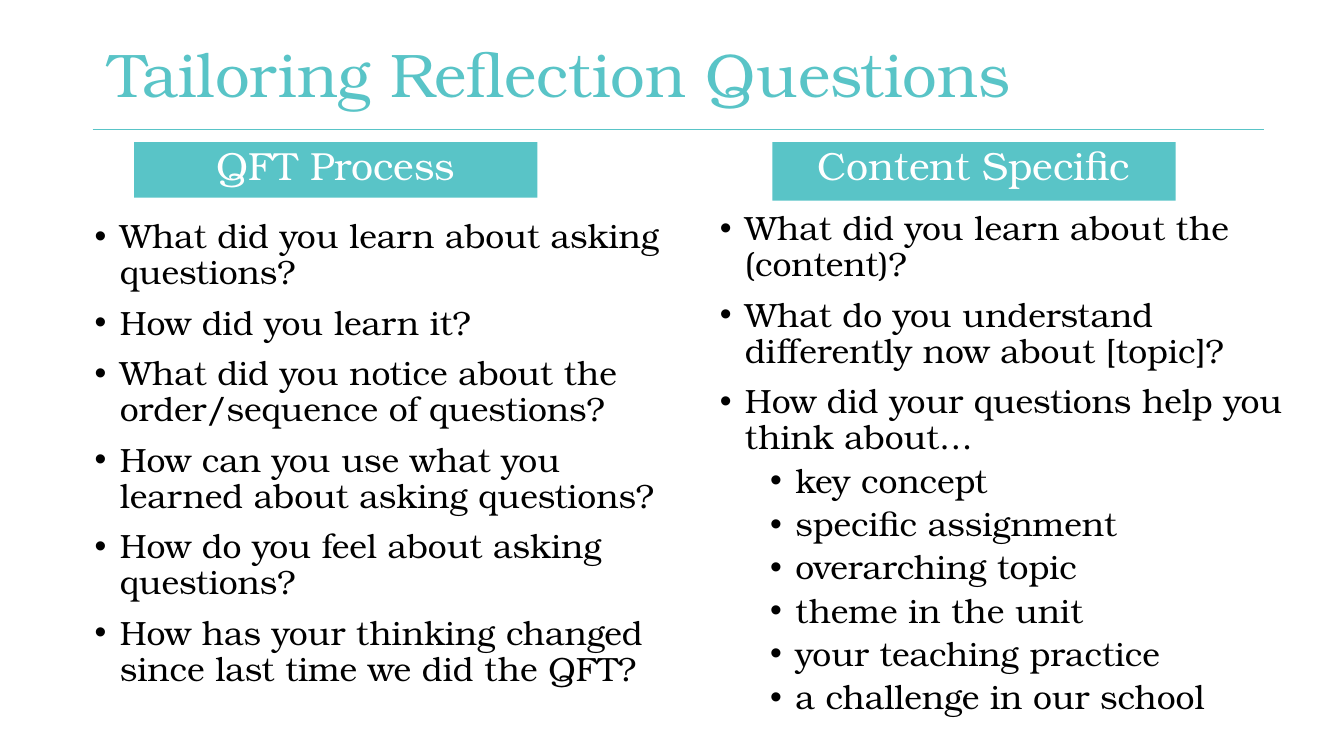
import pptx
import pptx.dml.color
import pptx.enum.shapes
import pptx.enum.text
import pptx.oxml
import pptx.oxml.ns
import pptx.util

PX = 9144
FONT = "TeX Gyre Bonum"
COLORS = {"teal": "59C4C7", "black": "000000", "white": "FFFFFF"}
ANCHOR = pptx.enum.text.MSO_ANCHOR
INDENT = 25 * PX


def color(name):
    return pptx.dml.color.RGBColor.from_string(COLORS[name])


def style(para, size, color_name, space_before=0):
    para.line_spacing = 0.9
    para.space_before = pptx.util.Pt(space_before)
    for span in para.runs:
        span.font.name = FONT
        span.font.size = pptx.util.Pt(size)
        span.font.color.rgb = color(color_name)


deck = pptx.Presentation()
deck.slide_width = 1333 * PX
deck.slide_height = 750 * PX
page = deck.slides.add_slide(deck.slide_layouts[6])

rule = page.shapes.add_connector(
    pptx.enum.shapes.MSO_CONNECTOR.STRAIGHT, 92 * PX, 128 * PX, 1254 * PX, 128 * PX
)
rule.line.color.rgb = color("teal")
rule.line.width = pptx.util.Pt(0.5)
pptx.oxml.ns.qn("a:effectLst")
rule._element.spPr.append(
    rule._element.makeelement(pptx.oxml.ns.qn("a:effectLst"), {})
)

title = page.shapes.add_textbox(98 * PX, 4 * PX, 1150 * PX, 145 * PX)
title.text_frame.word_wrap = True
title.text_frame.vertical_anchor = ANCHOR.MIDDLE
title.text_frame.text = "Tailoring Reflection Questions"
style(title.text_frame.paragraphs[0], 44, "teal")

columns = [
    ((84, 213, 585, 537), [
        (0, "What did you learn about asking questions?"),
        (0, "How did you learn it?"),
        (0, "What did you notice about the order/sequence of questions?"),
        (0, "How can you use what you learned about asking questions?"),
        (0, "How do you feel about asking questions?"),
        (0, "How has your thinking changed since last time we did the QFT?"),
    ]),
    ((704, 205, 611, 524), [
        (0, "What did you learn about the (content)?"),
        (0, "What do you understand differently now about [topic]?"),
        (0, "How did your questions help you think about…"),
        (1, "key concept"),
        (1, "specific assignment"),
        (1, "overarching topic"),
        (1, "theme in the unit"),
        (1, "your teaching practice"),
        (1, "a challenge in our school"),
    ]),
]
for bounds, questions in columns:
    box = page.shapes.add_textbox(*[length * PX for length in bounds])
    frame = box.text_frame
    frame.word_wrap = True
    frame.text = "\n".join(text for level, text in questions)
    for para, (level, text) in zip(frame.paragraphs, questions):
        para.level = level
        style(para, 24, "black", 5 if level else 10)
        properties = para._p.get_or_add_pPr()
        properties.set("marL", str(INDENT * (1 + 2 * level)))
        properties.set("indent", str(-INDENT))
        for tag, attributes in [
            ("a:buFont", {"typeface": "Arial"}),
            ("a:buChar", {"char": "•"}),
        ]:
            properties.append(
                properties.makeelement(pptx.oxml.ns.qn(tag), attributes)
            )

for left, height, text in [(133, 55, "QFT Process"), (766, 58, "Content Specific")]:
    header = page.shapes.add_shape(
        pptx.enum.shapes.MSO_SHAPE.RECTANGLE, left * PX, 141 * PX, 400 * PX, height * PX
    )
    header.shadow.inherit = False
    header.fill.solid()
    header.fill.fore_color.rgb = color("teal")
    header.line.fill.background()
    frame = header.text_frame
    frame.vertical_anchor = ANCHOR.TOP
    frame.text = text
    frame.paragraphs[0].alignment = pptx.enum.text.PP_ALIGN.CENTER
    style(frame.paragraphs[0], 28, "white", 10)

deck.save("out.pptx")
